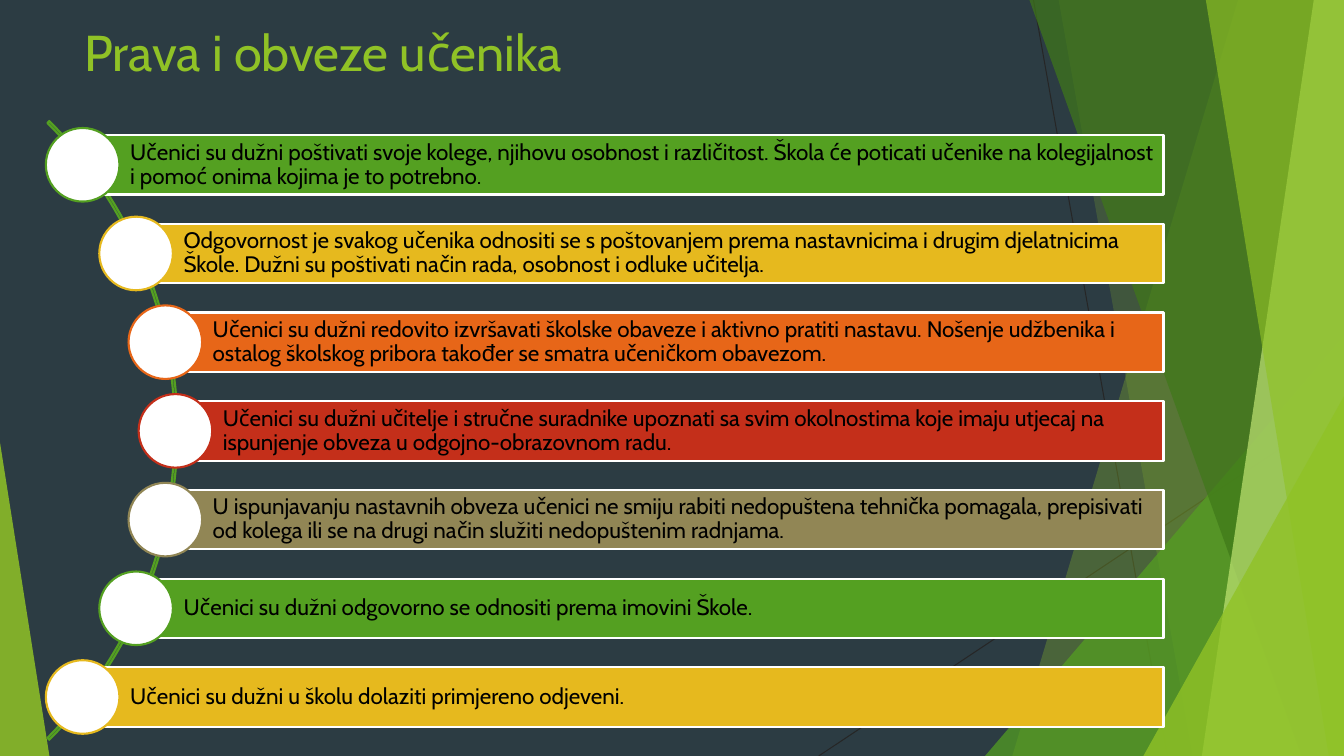
from lxml import etree
from pptx import Presentation
from pptx.dml.color import RGBColor
from pptx.enum.shapes import MSO_CONNECTOR, MSO_SHAPE
from pptx.enum.text import MSO_ANCHOR, PP_ALIGN
from pptx.oxml.ns import qn
from pptx.util import Inches, Pt

STRAIGHT = MSO_CONNECTOR.STRAIGHT
RECTANGLE = MSO_SHAPE.RECTANGLE
OVAL = MSO_SHAPE.OVAL
TRIANGLE = MSO_SHAPE.ISOSCELES_TRIANGLE
BLOCK_ARC = MSO_SHAPE.BLOCK_ARC
LEFT = PP_ALIGN.LEFT
TOP = MSO_ANCHOR.TOP
MIDDLE = MSO_ANCHOR.MIDDLE

WIDTH, HEIGHT = 13.33, 7.5
LIME, GREEN, YELLOW = "90C226", "54A021", "E6B91E"
ORANGE, RED, OLIVE = "E76618", "C42F1A", "918655"
WHITE, BLACK = "FFFFFF", "000000"

HAIRLINES = [(10.25, 0, 11.58, HEIGHT), (WIDTH, 4.03, 8.12, HEIGHT)]
BACK_SHARDS = [(12.28, 10.04, LIME, 30), (10.5, 11.83, LIME, 20)]
FRONT_SHARDS = [
    (10.21, 12.91, "3F7819", 70),
    (13.03, 11.92, "C0E474", 70),
    (11.96, 13.18, LIME, 65),
]

DUTIES = [
    (0.82, GREEN, "Učenici su dužni poštivati svoje kolege, njihovu osobnost i različitost. "
     "Škola će poticati učenike na kolegijalnost i pomoć onima kojima je to potrebno."),
    (1.35, YELLOW, "Odgovornost je svakog učenika odnositi se s poštovanjem prema nastavnicima "
     "i drugim djelatnicima Škole. Dužni su poštivati način rada, osobnost i odluke učitelja."),
    (1.64, ORANGE, "Učenici su dužni redovito izvršavati školske obaveze i aktivno pratiti nastavu. "
     "Nošenje udžbenika i ostalog školskog pribora također se smatra učeničkom obavezom."),
    (1.74, RED, "Učenici su dužni učitelje i stručne suradnike upoznati sa svim okolnostima "
     "koje imaju utjecaj na ispunjenje obveza u odgojno-obrazovnom radu."),
    (1.64, OLIVE, "U ispunjavanju nastavnih obveza učenici ne smiju rabiti nedopuštena tehnička "
     "pomagala, prepisivati od kolega ili se na drugi način služiti nedopuštenim radnjama."),
    (1.35, GREEN, "Učenici su dužni odgovorno se odnositi prema imovini Škole."),
    (0.82, YELLOW, "Učenici su dužni u školu dolaziti primjereno odjeveni."),
]
BAR_RIGHT, BAR_HEIGHT = 11.54, 0.59
FIRST_BAR, BAR_STEP = 1.34, 0.88
CIRCLE = 0.73


def rgb(value):
    return RGBColor.from_string(value)


def apply(target, values):
    for name, value in values.items():
        setattr(target, name, value)


class SlideBuilder:
    font = "Cabin"

    def __init__(self, slide, background):
        self.slide = slide
        slide.background.fill.solid()
        slide.background.fill.fore_color.rgb = rgb(background)

    def paint(self, shape, fill=None, line=None, opacity=100):
        shape.shadow.inherit = False
        if fill:
            shape.fill.solid()
            shape.fill.fore_color.rgb = rgb(fill)
            if opacity < 100:
                color = shape._element.spPr.find(qn("a:solidFill"))[0]
                etree.SubElement(color, qn("a:alpha"), val=str(opacity * 1000))
        else:
            shape.fill.background()
        if line:
            shape.line.color.rgb = rgb(line)
            shape.line.width = Pt(1.5)
        else:
            shape.line.fill.background()

    def shape(self, kind, box, adjustments=(), **look):
        shape = self.slide.shapes.add_shape(kind, *map(Inches, box))
        for index, value in enumerate(adjustments):
            shape.adjustments[index] = value
        self.paint(shape, **look)
        return shape

    def shard(self, top_x, bottom_x, fill, opacity):
        outline = self.slide.shapes.build_freeform(Inches(top_x), 0)
        corners = [(WIDTH, 0), (WIDTH, HEIGHT), (bottom_x, HEIGHT)]
        outline.add_line_segments([(Inches(x), Inches(y)) for x, y in corners])
        self.paint(outline.convert_to_shape(), fill=fill, opacity=opacity)

    def hairline(self, *ends):
        line = self.slide.shapes.add_connector(STRAIGHT, *map(Inches, ends))
        line.line.color.rgb = rgb("262626")
        line.line.width = Pt(0.75)
        etree.SubElement(line._element.spPr, qn("a:effectLst"))

    def label(self, shape, text, size, color, frame_format, line_spacing=1.0):
        frame = shape.text_frame
        apply(frame, {"word_wrap": True, **frame_format})
        paragraph = frame.paragraphs[0]
        apply(paragraph, {"alignment": LEFT, "line_spacing": line_spacing})
        run = paragraph.add_run()
        run.text = text
        apply(run.font, {"name": self.font, "size": Pt(size)})
        run.font.color.rgb = rgb(color)

    def title(self, text, box):
        heading = self.slide.shapes.add_textbox(*map(Inches, box))
        self.label(heading, text, 36, LIME, {"vertical_anchor": TOP})

    def duty(self, left, top, color, text):
        bar = self.shape(RECTANGLE, (left, top, BAR_RIGHT - left, BAR_HEIGHT),
                         fill=color, line=WHITE)
        margin = Inches(0.04)
        self.label(bar, text, 16, BLACK, {
            "vertical_anchor": MIDDLE,
            "margin_left": Inches(0.47),
            "margin_right": margin,
            "margin_top": margin,
            "margin_bottom": margin,
        }, line_spacing=0.9)
        circle_top = top + (BAR_HEIGHT - CIRCLE) / 2
        self.shape(OVAL, (left - CIRCLE / 2, circle_top, CIRCLE, CIRCLE),
                   fill=WHITE, line=color)


def main():
    deck = Presentation()
    apply(deck, {"slide_width": Inches(WIDTH), "slide_height": Inches(HEIGHT)})
    page = SlideBuilder(deck.slides.add_slide(deck.slide_layouts[6]), "2C3C43")

    for ends in HAIRLINES:
        page.hairline(*ends)
    for shard in BACK_SHARDS:
        page.shard(*shard)
    page.shape(TRIANGLE, (9.77, 3.33, 3.56, 4.17), [1], fill=GREEN, opacity=72)
    for shard in FRONT_SHARDS:
        page.shard(*shard)
    page.shape(TRIANGLE, (11.34, 3.93, 1.99, 3.57), [1], fill=LIME, opacity=80)
    page.shape(TRIANGLE, (0, 4.39, 0.49, 3.11), [0], fill=LIME, opacity=85)

    page.title("Prava i obveze učenika", (0.74, 0.16, 9.4, 1.44))
    page.shape(BLOCK_ARC, (-6.92, -0.07, 8.68, 8.68), [189, 27, 0.003], line=GREEN)
    for row, (left, color, text) in enumerate(DUTIES):
        page.duty(left, FIRST_BAR + row * BAR_STEP, color, text)

    deck.save("out.pptx")


if __name__ == "__main__":
    main()
